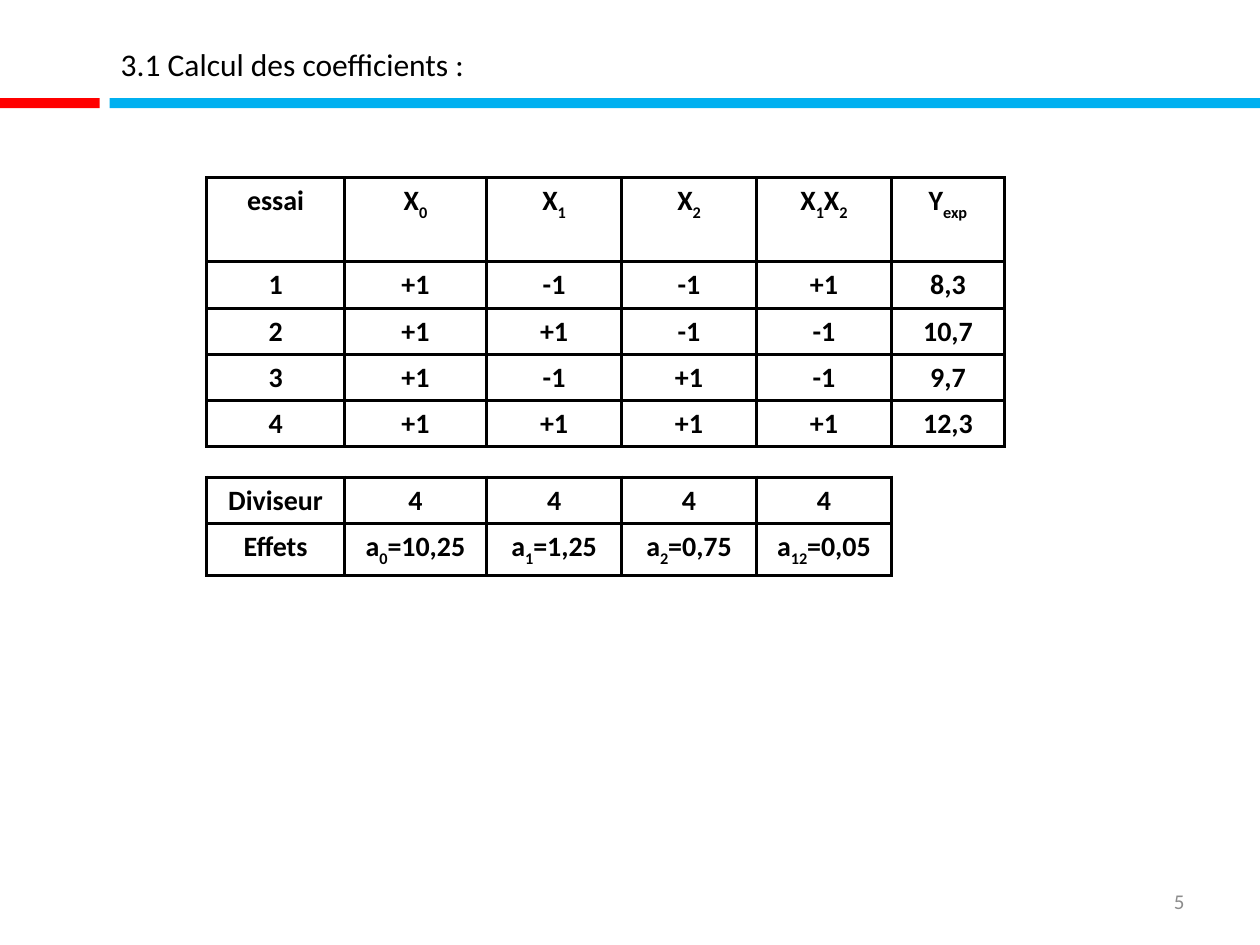
from dataclasses import dataclass

from lxml import etree
from pptx import Presentation
from pptx.dml.color import RGBColor
from pptx.enum.shapes import MSO_SHAPE
from pptx.enum.text import MSO_ANCHOR, MSO_AUTO_SIZE, PP_ALIGN
from pptx.oxml.ns import qn
from pptx.util import Cm, Pt

RECTANGLE = MSO_SHAPE.RECTANGLE
LEFT, CENTER, RIGHT = PP_ALIGN.LEFT, PP_ALIGN.CENTER, PP_ALIGN.RIGHT
TOP, MIDDLE = MSO_ANCHOR.TOP, MSO_ANCHOR.MIDDLE
TITLE_ONLY = 5


@dataclass(frozen=True)
class Theme:
    font: str = "Calibri"
    ink: str = "000000"
    muted: str = "8C8C8C"
    red: str = "FF0000"
    blue: str = "00B0F0"
    title_size: int = 18
    table_size: int = 16
    number_size: int = 12
    gap_size: int = 8
    border_width: int = 2


@dataclass(frozen=True)
class Bar:
    left: float
    width: float
    color: str


THEME = Theme()
SLIDE_WIDTH, SLIDE_HEIGHT = 25.4, 19.05
BAR_TOP, BAR_HEIGHT = 1.98, 0.2
BARS = [Bar(2.21, SLIDE_WIDTH - 2.21, THEME.blue), Bar(0, 2.01, THEME.red)]

COLUMN_WIDTHS = [2.77, 2.87, 2.72, 2.72, 2.72, 2.28]
ROW_HEIGHTS = [1.7] + [0.93] * 4 + [0.61, 0.93, 1.05]
# Underscores enclose subscripts.
EXPERIMENT_ROWS = [
    ["essai", "X_0_", "X_1_", "X_2_", "X_1_X_2_", "Y_exp_"],
    ["1", "+1", "-1", "-1", "+1", "8,3"],
    ["2", "+1", "+1", "-1", "-1", "10,7"],
    ["3", "+1", "-1", "+1", "-1", "9,7"],
    ["4", "+1", "+1", "+1", "+1", "12,3"],
    [""] * 6,
    ["Diviseur", "4", "4", "4", "4", ""],
    ["Effets", "a_0_=10,25", "a_1_=1,25", "a_2_=0,75", "a_12_=0,05", ""],
]
GAP_ROW = 5


def style_paragraph(paragraph, size: int, color: str, align, bold: bool = False) -> None:
    paragraph.alignment = align
    font = paragraph.font
    font.name, font.size, font.bold = THEME.font, Pt(size), bold
    font.color.rgb = RGBColor.from_string(color)


def add_bar(slide, bar: Bar) -> None:
    shape = slide.shapes.add_shape(
        RECTANGLE, Cm(bar.left), Cm(BAR_TOP), Cm(bar.width), Cm(BAR_HEIGHT))
    shape.shadow.inherit = False
    shape.fill.solid()
    shape.fill.fore_color.rgb = RGBColor.from_string(bar.color)
    shape.line.fill.background()


def add_title(slide, text: str) -> None:
    title = slide.shapes.title
    title.left, title.top, title.width, title.height = Cm(2.18), Cm(0.79), Cm(7.67), Cm(1.02)
    frame = title.text_frame
    frame.text = text
    frame.word_wrap = False
    frame.auto_size = MSO_AUTO_SIZE.SHAPE_TO_FIT_TEXT
    frame.vertical_anchor = TOP
    style_paragraph(frame.paragraphs[0], THEME.title_size, THEME.ink, LEFT)


def border_sides(row: int, column: int) -> str:
    """Return the drawn sides of a cell, as letters among L, R, T and B."""
    if EXPERIMENT_ROWS[row][column]:
        return "LRTB"
    if row == GAP_ROW:
        return "TB" if EXPERIMENT_ROWS[row + 1][column] else "T"
    return "L"


def set_borders(cell, drawn_sides: str) -> None:
    properties = cell._tc.get_or_add_tcPr()
    for side in "LRTB":
        line = etree.SubElement(properties, qn(f"a:ln{side}"))
        if side in drawn_sides:
            line.set("w", str(Pt(THEME.border_width)))
            fill = etree.SubElement(line, qn("a:solidFill"))
            etree.SubElement(fill, qn("a:srgbClr"), val=THEME.ink)
        else:
            etree.SubElement(line, qn("a:noFill"))


def write_formula(paragraph, text: str) -> None:
    """Write text whose parts between underscores are subscripts."""
    for index, part in enumerate(text.split("_")):
        if part:
            run = paragraph.add_run()
            run.text = part
            if index % 2:
                run.font._element.set("baseline", "-30000")


def add_experiment_table(slide) -> None:
    table = slide.shapes.add_table(
        len(ROW_HEIGHTS), len(COLUMN_WIDTHS), Cm(4.17), Cm(3.58),
        Cm(sum(COLUMN_WIDTHS)), Cm(sum(ROW_HEIGHTS))).table
    table.first_row = table.horz_banding = False
    for column, width in zip(table.columns, COLUMN_WIDTHS):
        column.width = Cm(width)
    for row, height in zip(table.rows, ROW_HEIGHTS):
        row.height = Cm(height)
    for row_index, values in enumerate(EXPERIMENT_ROWS):
        size = THEME.gap_size if row_index == GAP_ROW else THEME.table_size
        for column_index, value in enumerate(values):
            cell = table.cell(row_index, column_index)
            set_borders(cell, border_sides(row_index, column_index))
            cell.fill.background()
            paragraph = cell.text_frame.paragraphs[0]
            style_paragraph(paragraph, size, THEME.ink, CENTER, bold=True)
            write_formula(paragraph, value)
            if not value:
                paragraph._p.get_or_add_endParaRPr().set("sz", str(size * 100))


def add_page_number(slide, number: str) -> None:
    frame = slide.shapes.add_textbox(Cm(18.21), Cm(17.65), Cm(5.92), Cm(1.02)).text_frame
    frame.word_wrap = True
    frame.vertical_anchor = MIDDLE
    frame.text = number
    style_paragraph(frame.paragraphs[0], THEME.number_size, THEME.muted, RIGHT)


def main() -> None:
    presentation = Presentation()
    presentation.slide_width, presentation.slide_height = Cm(SLIDE_WIDTH), Cm(SLIDE_HEIGHT)
    slide = presentation.slides.add_slide(presentation.slide_layouts[TITLE_ONLY])
    for bar in BARS:
        add_bar(slide, bar)
    add_title(slide, "3.1 Calcul des coefficients :")
    add_experiment_table(slide)
    add_page_number(slide, "5")
    presentation.save("out.pptx")


if __name__ == "__main__":
    main()
